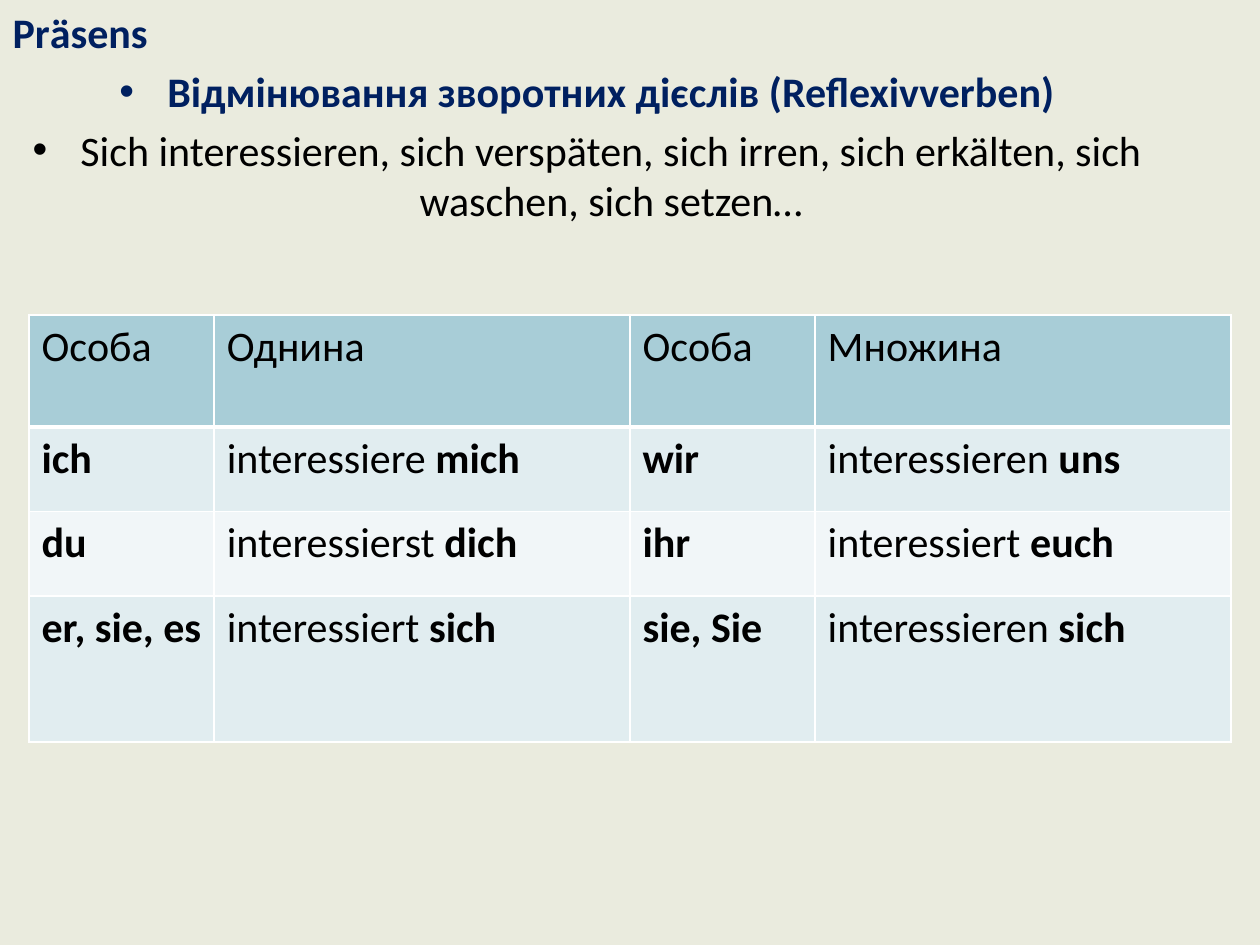
from lxml import etree
from pptx import Presentation
from pptx.dml.color import RGBColor
from pptx.enum.text import MSO_ANCHOR, MSO_AUTO_SIZE, PP_ALIGN
from pptx.oxml.ns import qn
from pptx.util import Inches, Pt

BACKGROUND = RGBColor(0xEA, 0xEB, 0xDE)
NAVY = RGBColor(0x00, 0x20, 0x60)
BLACK = RGBColor(0x00, 0x00, 0x00)
HEADER_FILL = RGBColor(0xA8, 0xCD, 0xD7)
BAND_FILLS = [RGBColor(0xE1, 0xED, 0xF0), RGBColor(0xF1, 0xF6, 0xF8)]
BORDER = "FFFFFF"


def add_span(para, text, color, bold):
    span = para.add_run()
    span.text = text
    span.font.name = "Calibri"
    span.font.size = Pt(24)
    span.font.bold = bold
    span.font.color.rgb = color


def add_border(cell, side, points):
    line = etree.SubElement(cell._tc.get_or_add_tcPr(), qn(f"a:ln{side}"),
                            w=str(Pt(points)))
    fill = etree.SubElement(line, qn("a:solidFill"))
    etree.SubElement(fill, qn("a:srgbClr"), val=BORDER)


deck = Presentation()
deck.slide_width, deck.slide_height = Inches(10), Inches(7.5)
page = deck.slides.add_slide(deck.slide_layouts[5])
page.background.fill.solid()
page.background.fill.fore_color.rgb = BACKGROUND

# Title in the top left corner
title = page.shapes.title
title.left, title.top = Inches(0), Inches(0)
title.width, title.height = Inches(1.41), Inches(0.5)
title.text_frame.word_wrap = False
title.text_frame.auto_size = MSO_AUTO_SIZE.NONE
title.text_frame.vertical_anchor = MSO_ANCHOR.TOP
heading = title.text_frame.paragraphs[0]
heading.alignment = PP_ALIGN.LEFT
add_span(heading, "Prӓsens", NAVY, True)

# Centred bullets: topic and example verbs
box = page.shapes.add_textbox(Inches(0.16), Inches(0.47), Inches(9), Inches(1.5))
box.text_frame.word_wrap = True
bullets = [
    ("Відмінювання зворотних дієслів (Reflexivverben)", NAVY, True),
    ("Sich interessieren, sich verspäten, sich irren, sich erkälten, "
     "sich waschen, sich setzen…", BLACK, False),
]
for index, (text, color, bold) in enumerate(bullets):
    frame = box.text_frame
    para = frame.paragraphs[0] if index == 0 else frame.add_paragraph()
    para.alignment = PP_ALIGN.CENTER
    para.space_before = Pt(4.8)
    props = para._p.get_or_add_pPr()
    props.set("marL", str(Inches(0.38)))
    props.set("indent", str(Inches(-0.38)))
    etree.SubElement(props, qn("a:buFont"), typeface="Arial")
    etree.SubElement(props, qn("a:buChar"), char="•")
    add_span(para, text, color, bold)

# Conjugation table: each cell is a plain part followed by a bold part
rows = [
    [("Особа", ""), ("Однина", ""), ("Особа", ""), ("Множина", "")],
    [("", "ich"), ("interessiere ", "mich"), ("", "wir"), ("interessieren ", "uns")],
    [("", "du"), ("interessierst ", "dich"), ("", "ihr"), ("interessiert ", "euch")],
    [("", "er, sie, es"), ("interessiert ", "sich"),
     ("", "sie, Sie"), ("interessieren ", "sich")],
]
column_widths = [1.47, 3.3, 1.47, 3.3]
row_heights = [0.89, 0.67, 0.67, 1.16]
table = page.shapes.add_table(
    len(rows), len(column_widths), Inches(0.23), Inches(2.5),
    Inches(sum(column_widths)), Inches(sum(row_heights))).table
for column, width in zip(table.columns, column_widths):
    column.width = Inches(width)
for row, height in zip(table.rows, row_heights):
    row.height = Inches(height)

for r, row in enumerate(rows):
    for c, (plain, strong) in enumerate(row):
        cell = table.cell(r, c)
        # A thick line separates the header from the body
        add_border(cell, "L", 1)
        add_border(cell, "R", 1)
        add_border(cell, "T", 3 if r == 1 else 1)
        add_border(cell, "B", 3 if r == 0 else 1)
        cell.fill.solid()
        cell.fill.fore_color.rgb = HEADER_FILL if r == 0 else BAND_FILLS[(r - 1) % 2]
        for text, bold in ((plain, False), (strong, True)):
            if text:
                add_span(cell.text_frame.paragraphs[0], text, BLACK, bold)

deck.save("out.pptx")
